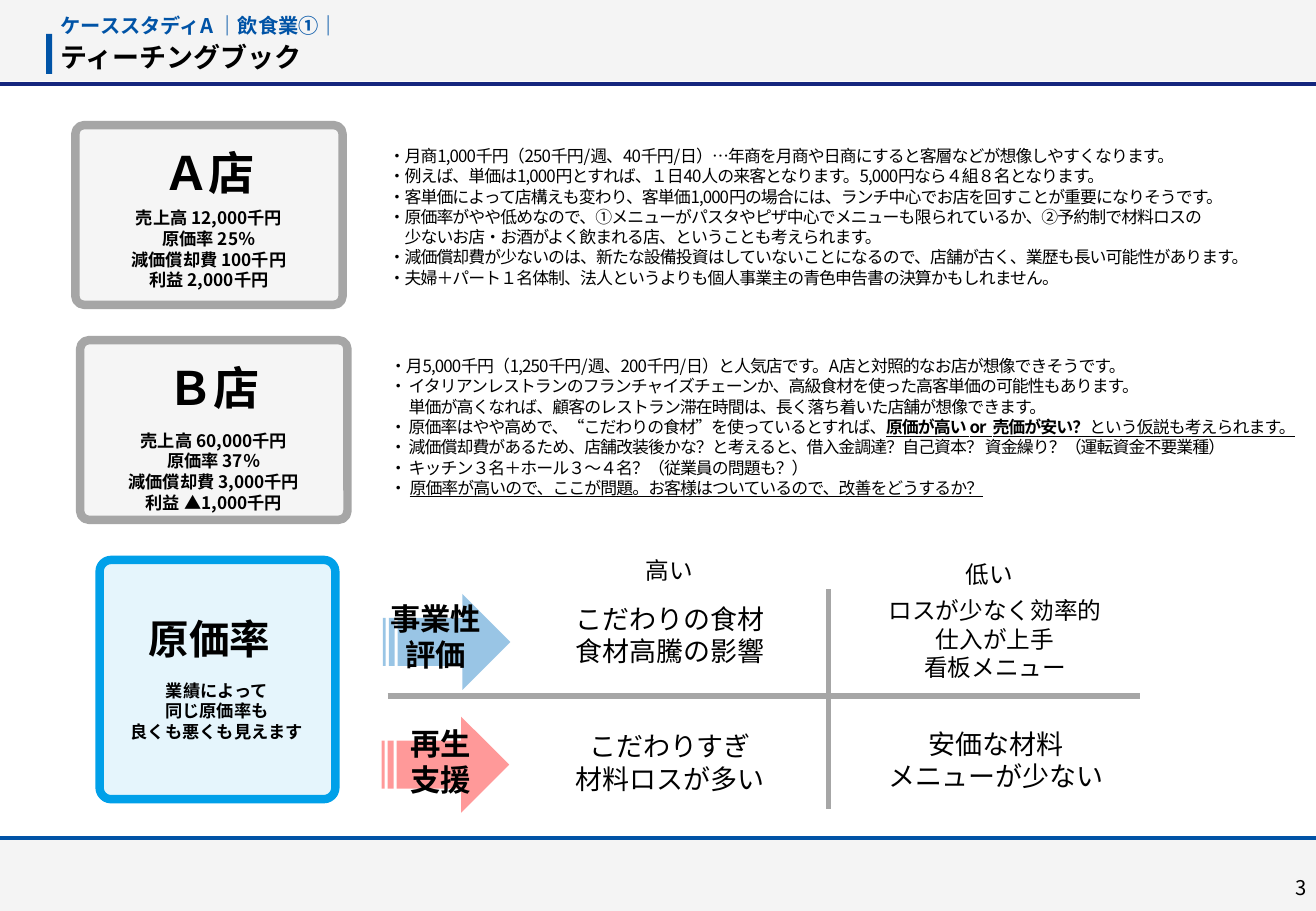
"""Build the restaurant case study slide: two shops and a cost ratio matrix."""
from lxml import etree
from pptx import Presentation
from pptx.dml.color import RGBColor
from pptx.enum.shapes import MSO_CONNECTOR, MSO_SHAPE
from pptx.enum.text import MSO_ANCHOR, PP_ALIGN
from pptx.oxml.ns import qn
from pptx.util import Inches, Pt

RECT, ROUND = MSO_SHAPE.RECTANGLE, MSO_SHAPE.ROUNDED_RECTANGLE
ARROW = MSO_SHAPE.STRIPED_RIGHT_ARROW
STRAIGHT = MSO_CONNECTOR.STRAIGHT
LEFT, CENTER, RIGHT = PP_ALIGN.LEFT, PP_ALIGN.CENTER, PP_ALIGN.RIGHT
TOP, MIDDLE = MSO_ANCHOR.TOP, MSO_ANCHOR.MIDDLE
FONT = "Noto Sans CJK JP"
BLACK = RGBColor(0x00, 0x00, 0x00)
NAVY = RGBColor(0x15, 0x26, 0x7E)
BLUE = RGBColor(0x00, 0x53, 0xA6)
SKY = RGBColor(0x00, 0xA0, 0xE9)
AZURE = RGBColor(0x00, 0x70, 0xC0)
RED = RGBColor(0xFF, 0x00, 0x00)
GRAY = RGBColor(0xA6, 0xA6, 0xA6)
PALE = RGBColor(0xEB, 0xEB, 0xEB)

deck = Presentation()
deck.slide_width, deck.slide_height = Inches(10.83), Inches(7.5)
slide = deck.slides.add_slide(deck.slide_layouts[6])
shapes = slide.shapes


def add_shape(kind, box, color, alpha=100, edge=0):
    shape = shapes.add_shape(kind, *map(Inches, box))
    shape.shadow.inherit = False
    shape.fill.solid()
    shape.fill.fore_color.rgb = color
    tint = shape.fill._xPr.find(qn("a:solidFill"))[0]
    etree.SubElement(tint, qn("a:alpha"), val=str(alpha * 1000))
    if edge:
        shape.line.color.rgb = color
        shape.line.width = Pt(edge)
    else:
        shape.line.fill.background()
    if kind == ROUND:
        shape.adjustments[0] = 0.049


def add_text(box, lines, size, bold=False, align=CENTER, color=BLACK, anchor=TOP, track=0):
    frame = shapes.add_textbox(*map(Inches, box)).text_frame
    frame.word_wrap = True
    frame.vertical_anchor = anchor
    frame.text = "\n".join("".join(text for text, *_ in line) if isinstance(line, list) else line
                           for line in lines)
    for para, line in zip(frame.paragraphs, lines):
        para.alignment = align
        if isinstance(line, list):
            para.text = ""
            for text, heavy, under in line:
                run = para.add_run()
                run.text = text
                run.font.bold, run.font.underline = heavy, under
        for run in para.runs:
            run.font.name, run.font.size = FONT, Pt(size)
            run.font.color.rgb = color
            if not isinstance(line, list):
                run.font.bold = bold
            props = run.font._element
            etree.SubElement(props, qn("a:ea"), typeface=FONT)
            if track:
                props.set("spc", str(track))
    return frame


add_shape(RECT, (0, -0.01, 10.83, 0.68), PALE, 50)
add_shape(RECT, (0, 6.9, 10.83, 0.6), PALE, 50)
add_shape(RECT, (0.38, 0.28, 0.05, 0.33), BLUE)

rules = [
    (0, 0.69, 10.83, 0.69, NAVY, 2.25),
    (0, 6.9, 10.83, 6.9, BLUE, 2.25),
    (6.82, 4.85, 6.82, 6.66, GRAY, 3),
    (3.19, 5.73, 9.38, 5.73, GRAY, 3),
]
for *ends, color, width in rules:
    rule = shapes.add_connector(STRAIGHT, *map(Inches, ends))
    rule.line.color.rgb = color
    rule.line.width = Pt(width)
    etree.SubElement(rule._element.spPr, qn("a:effectLst"))

heads = [
    ("ティーチングブック", 0.28, 0.33, 16, BLACK),
    ("ケーススタディA ｜飲食業①｜", 0.07, 0.22, 12, BLUE),
]
for title, top, high, size, color in heads:
    frame = add_text((0.5, top, 9.26, high), [title], size, True, LEFT, color, MIDDLE)
    frame.margin_left = frame.margin_right = frame.margin_bottom = 0
    frame.margin_top = Inches(0.08)
    frame.paragraphs[0].line_spacing = 0.9
add_text((8.41, 7.11, 2.44, 0.4), ["3"], 12, align=RIGHT, anchor=MIDDLE)

shops = [
    ("Ａ店", 0.62, 1.03, 0.63,
     ["売上高 12,000千円", "原価率 25％", "減価償却費 100千円", "利益 2,000千円"]),
    ("Ｂ店", 0.66, 2.8, 0.69,
     ["売上高 60,000千円", "原価率 37％", "減価償却費 3,000千円", "利益 ▲1,000千円"]),
]
for name, left, top, drop, facts in shops:
    add_shape(ROUND, (left, top, 2.2, 1.48), GRAY, 10, 5)
    add_text((left - 0.14, top + 0.11, 2.48, 0.56), [name], 27.3, True)
    add_text((left - 0.32, top + drop, 2.84, 0.94), facts, 10.2, True)

notes = [
    (3.1, 1.15, [
        "・月商1,000千円（250千円/週、40千円/日）…年商を月商や日商にすると客層などが想像しやすくなります。",
        "・例えば、単価は1,000円とすれば、１日40人の来客となります。5,000円なら４組８名となります。",
        "・客単価によって店構えも変わり、客単価1,000円の場合には、ランチ中心でお店を回すことが重要になりそうです。",
        "・原価率がやや低めなので、①メニューがパスタやピザ中心でメニューも限られているか、②予約制で材料ロスの",
        "　少ないお店・お酒がよく飲まれる店、ということも考えられます。",
        "・減価償却費が少ないのは、新たな設備投資はしていないことになるので、店舗が古く、業歴も長い可能性があります。",
        "・夫婦＋パート１名体制、法人というよりも個人事業主の青色申告書の決算かもしれません。",
    ]),
    (3.11, 2.88, [
        "・月5,000千円（1,250千円/週、200千円/日）と人気店です。A店と対照的なお店が想像できそうです。",
        "・ イタリアンレストランのフランチャイズチェーンか、高級食材を使った高客単価の可能性もあります。",
        "　 単価が高くなれば、顧客のレストラン滞在時間は、長く落ち着いた店舗が想像できます。",
        [("・ 原価率はやや高めで、“こだわりの食材”を使っているとすれば、", False, False),
         ("原価が高い or  売価が安い？", True, True),
         ("という仮説も考えられます。", False, True)],
        "・ 減価償却費があるため、店舗改装後かな？と考えると、借入金調達？自己資本？ 資金繰り？（運転資金不要業種）",
        "・ キッチン３名＋ホール３～４名？（従業員の問題も？）",
        [("・ ", False, False),
         ("原価率が高いので、ここが問題。お客様はついているので、改善をどうするか？", False, True)],
    ]),
]
for left, top, lines in notes:
    frame = add_text((left, top, 7.62, 1.28), lines, 10, align=LEFT, track=-50)
    frame.margin_right = 0

add_shape(ROUND, (0.82, 4.61, 1.94, 1.97), SKY, 10, 5)
add_text((1.05, 5.01, 1.35, 0.5), ["原価率"], 24, True)
add_text((0.82, 5.55, 1.93, 0.62), ["業績によって", "同じ原価率も", "良くも悪くも見えます"], 10.2, True)

add_shape(ARROW, (3.15, 4.89, 1.05, 0.79), AZURE, 40)
add_shape(ARROW, (3.14, 5.9, 1.05, 0.79), RED, 40)
add_text((3.06, 4.89, 1.05, 0.71), ["事業性評価"], 18, True)
add_text((3.1, 5.92, 1.05, 0.71), ["再生", "支援"], 18, True)

cells = [
    ((4.79, 4.53, 1.44, 0.34), ["高い"], 14),
    ((7.42, 4.56, 1.44, 0.34), ["低い"], 14),
    ((4.46, 4.91, 2.11, 0.64), ["こだわりの食材", "食材高騰の影響"], 16),
    ((6.92, 4.86, 2.54, 0.81), ["ロスが少なく効率的", "仕入が上手", "看板メニュー"], 14),
    ((4.46, 5.96, 2.11, 0.64), ["こだわりすぎ", "材料ロスが多い"], 16),
    ((7.14, 5.94, 2.11, 0.64), ["安価な材料", "メニューが少ない"], 16),
]
for box, lines, size in cells:
    add_text(box, lines, size)

deck.save("out.pptx")
